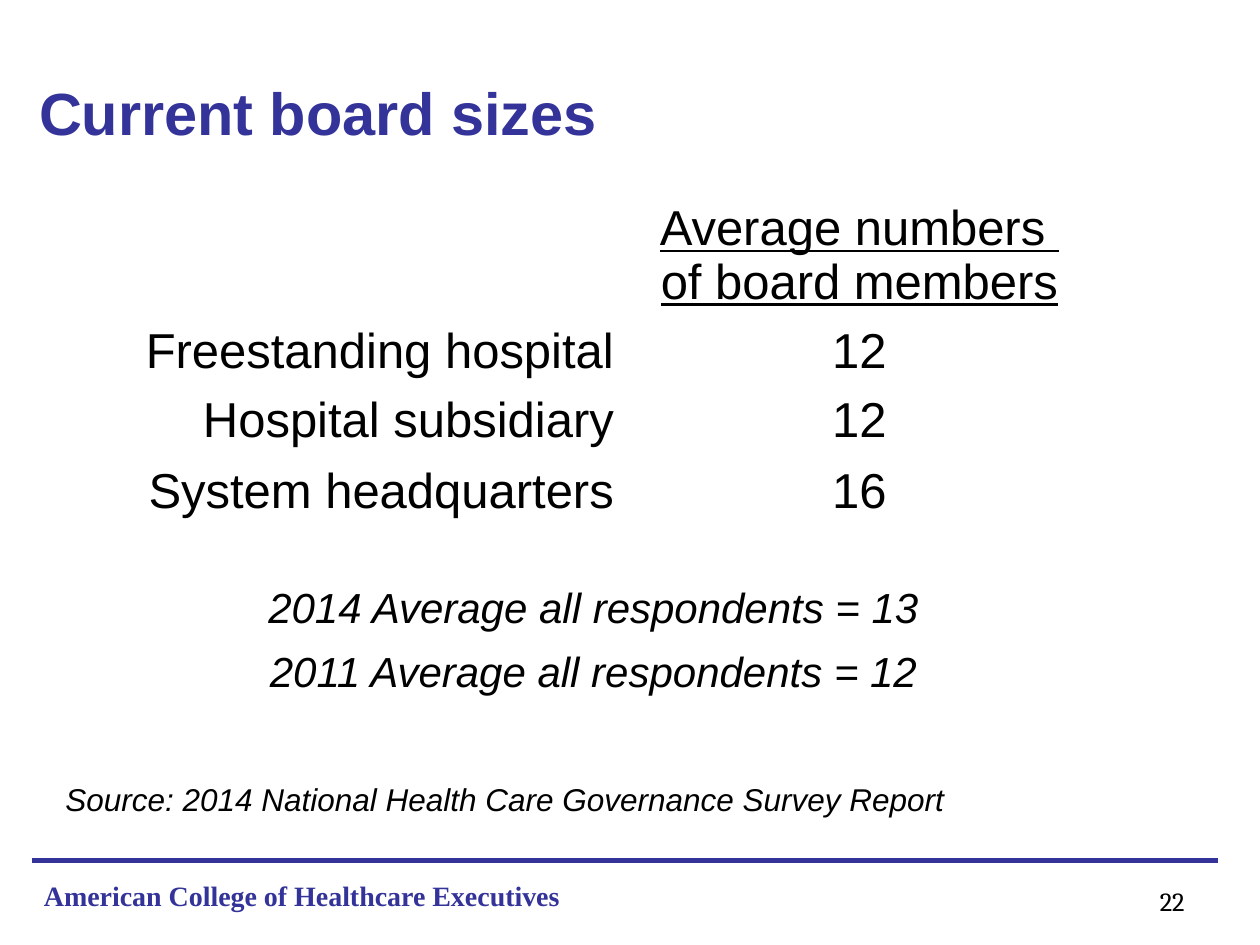
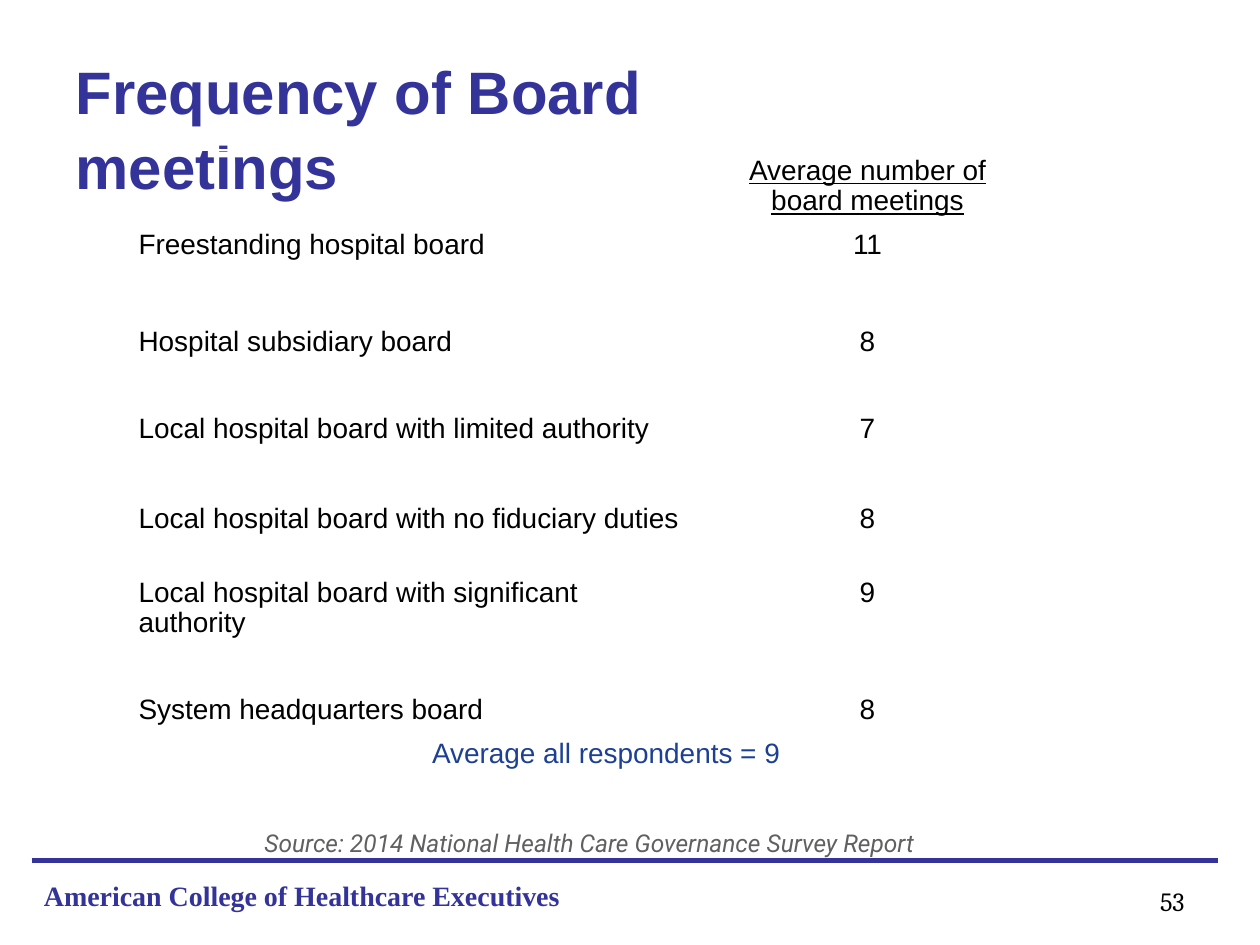
"""Build two slides on hospital board sizes and meeting frequency."""
import dataclasses

import lxml.etree
import pptx
import pptx.dml.color
import pptx.enum.shapes
import pptx.enum.text
import pptx.oxml.ns
import pptx.util

Inches = pptx.util.Inches
ALIGN = pptx.enum.text.PP_ALIGN
ANCHOR = pptx.enum.text.MSO_ANCHOR
TITLE_ONLY = 5


@dataclasses.dataclass(frozen=True)
class Theme:
    """Hold the colours and type styles that the slides share."""
    navy: str = "333399"
    black: str = "000000"
    blue: str = "1D4095"
    grey: str = "606060"
    rule_width: float = 3

    def font(self, size, color=None, name="Arial", **extra):
        """Return the format values of one type style."""
        return {"size": pptx.util.Pt(size), "name": name,
                "color": color or self.black, **extra}

    def title(self, size):
        """Return the title style."""
        return self.font(size, self.navy, bold=True)

    def footer(self):
        """Return the footer style."""
        return self.font(16, self.navy, "Times New Roman", bold=True)

    def page_number(self):
        """Return the page number style."""
        return self.font(15, name="Cambria")


THEME = Theme()


def set_values(target, values):
    """Set each named attribute of the target."""
    for name, value in values.items():
        setattr(target, name, value)


def write(frame, text, font, align=ALIGN.LEFT, spacing=1.0):
    """Write text into a frame, one paragraph a line, in one type style."""
    frame.text = text
    values = {name: value for name, value in font.items() if name != "color"}
    for para in frame.paragraphs:
        set_values(para, {"alignment": align, "line_spacing": spacing})
        for span in para.runs:
            set_values(span.font, values)
            span.font.color.rgb = pptx.dml.color.RGBColor.from_string(font["color"])


def add_text(page, area, text, font, align=ALIGN.LEFT):
    """Add a wrapped text box."""
    box = page.shapes.add_textbox(*map(Inches, area))
    box.text_frame.word_wrap = True
    write(box.text_frame, text, font, align)


def add_rule(page):
    """Draw the line above the footer."""
    line = page.shapes.add_connector(
        pptx.enum.shapes.MSO_CONNECTOR.STRAIGHT,
        *map(Inches, (0.25, 6.83, 9.67, 6.83)))
    line.line.color.rgb = pptx.dml.color.RGBColor.from_string(THEME.navy)
    line.line.width = pptx.util.Pt(THEME.rule_width)
    lxml.etree.SubElement(line._element.spPr, pptx.oxml.ns.qn("a:effectLst"))


def add_page(deck, title, area, title_size, number, spacing=1.0):
    """Add a page with its title, footer, rule and number."""
    page = deck.slides.add_slide(deck.slide_layouts[TITLE_ONLY])
    heading = page.shapes.title
    left, top, width, height = map(Inches, area)
    set_values(heading, {"left": left, "top": top, "width": width, "height": height})
    set_values(heading.text_frame, {"word_wrap": True, "vertical_anchor": ANCHOR.MIDDLE})
    write(heading.text_frame, title, THEME.title(title_size), spacing=spacing)
    add_text(page, (0.25, 6.92, 6.58, 0.5),
             "American College of Healthcare Executives", THEME.footer())
    add_rule(page)
    add_text(page, (7.17, 6.98, 2.33, 0.35), number, THEME.page_number(), ALIGN.RIGHT)
    return page


def add_grid(page, corner, widths, heights):
    """Add a plain table without fills or cell insets above and below."""
    size = sum(widths), sum(heights)
    grid = page.shapes.add_table(len(heights), len(widths),
                                 *map(Inches, corner + size)).table
    set_values(grid, {"first_row": False, "horz_banding": False})
    for column, width in zip(grid.columns, widths):
        column.width = Inches(width)
    for row, height in zip(grid.rows, heights):
        row.height = Inches(height)
        for cell in row.cells:
            cell.fill.background()
            set_values(cell, {"margin_top": 0, "margin_bottom": 0})
    return grid


def fill_cell(cell, text, font, align, inset, spacing=1.0):
    """Write one cell below its top inset."""
    set_values(cell, {"margin_top": Inches(inset), "vertical_anchor": ANCHOR.TOP})
    write(cell.text_frame, text, font, align, spacing)


def fill_rows(grid, header, rows, font, label_align, inset, spacing):
    """Write the underlined header and the rows of label and value."""
    fill_cell(grid.cell(0, 1), header, {**font, "underline": True},
              ALIGN.CENTER, inset, spacing)
    for index, (label, value) in enumerate(rows, start=1):
        fill_cell(grid.cell(index, 0), label, font, label_align, inset, spacing)
        fill_cell(grid.cell(index, 1), value, font, ALIGN.CENTER, inset, spacing)


def fill_summary(grid, row, text, font, inset, indent=0.1):
    """Write a centred summary across both columns."""
    cell = grid.cell(row, 0)
    cell.merge(grid.cell(row, 1))
    cell.margin_left = Inches(indent)
    fill_cell(cell, text, font, ALIGN.CENTER, inset)


def add_board_sizes(deck):
    """Add the page of average board sizes."""
    page = add_page(deck, "Current board sizes", (0.21, 0.26, 9, 1.25), 34, "22")
    rows = [("Freestanding hospital", "12"), ("Hospital subsidiary", "12"),
            ("System headquarters", "16")]
    grid = add_grid(page, (0.75, 1.55), (4.22, 3.7),
                    (0.95, 0.55, 0.56, 0.95, 0.51, 0.46))
    fill_rows(grid, "Average numbers \nof board members", rows,
              THEME.font(28), ALIGN.RIGHT, 0.06, 0.98)
    for row, text in enumerate(("2014 Average all respondents = 13",
                                "2011 Average all respondents = 12"), start=4):
        fill_summary(grid, row, text, THEME.font(24, italic=True), 0.06)
    add_text(page, (0.42, 6.14, 7.35, 0.71),
             "Source: 2014 National Health Care Governance Survey Report",
             THEME.font(18, italic=True))


def add_meeting_frequency(deck):
    """Add the page of average board meetings."""
    page = add_page(deck, "Frequency of Board \vmeetings", (0.5, 0.38, 9, 1.25),
                    34.2, "53", spacing=1.04)
    rows = [("Freestanding hospital board", "11"),
            ("Hospital subsidiary board", "8"),
            ("Local hospital board with limited authority", "7"),
            ("Local hospital board with no fiduciary duties", "8"),
            ("Local hospital board with significant authority", "9"),
            ("System headquarters board", "8")]
    grid = add_grid(page, (1, 1.19), (4.56, 2.65),
                    (0.59, 0.34, 1.12, 0.71, 0.59, 0.93, 0.34, 0.34))
    fill_rows(grid, "Average number of\vboard meetings", rows,
              THEME.font(16), ALIGN.LEFT, 0.05, 0.97)
    for cell in grid.rows[2].cells:
        cell.margin_top = Inches(0.48)
    fill_summary(grid, 7, "Average all respondents = 9",
                 THEME.font(16, THEME.blue), 0.05, indent=0.51)
    add_text(page, (2, 6.52, 5.79, 0.64),
             "Source: 2014 National Health Care Governance Survey Report",
             THEME.font(14, THEME.grey, "Roboto", italic=True))


def main():
    """Build and save the deck."""
    deck = pptx.Presentation()
    set_values(deck, {"slide_width": Inches(10), "slide_height": Inches(7.5)})
    add_board_sizes(deck)
    add_meeting_frequency(deck)
    deck.save("out.pptx")


if __name__ == "__main__":
    main()
